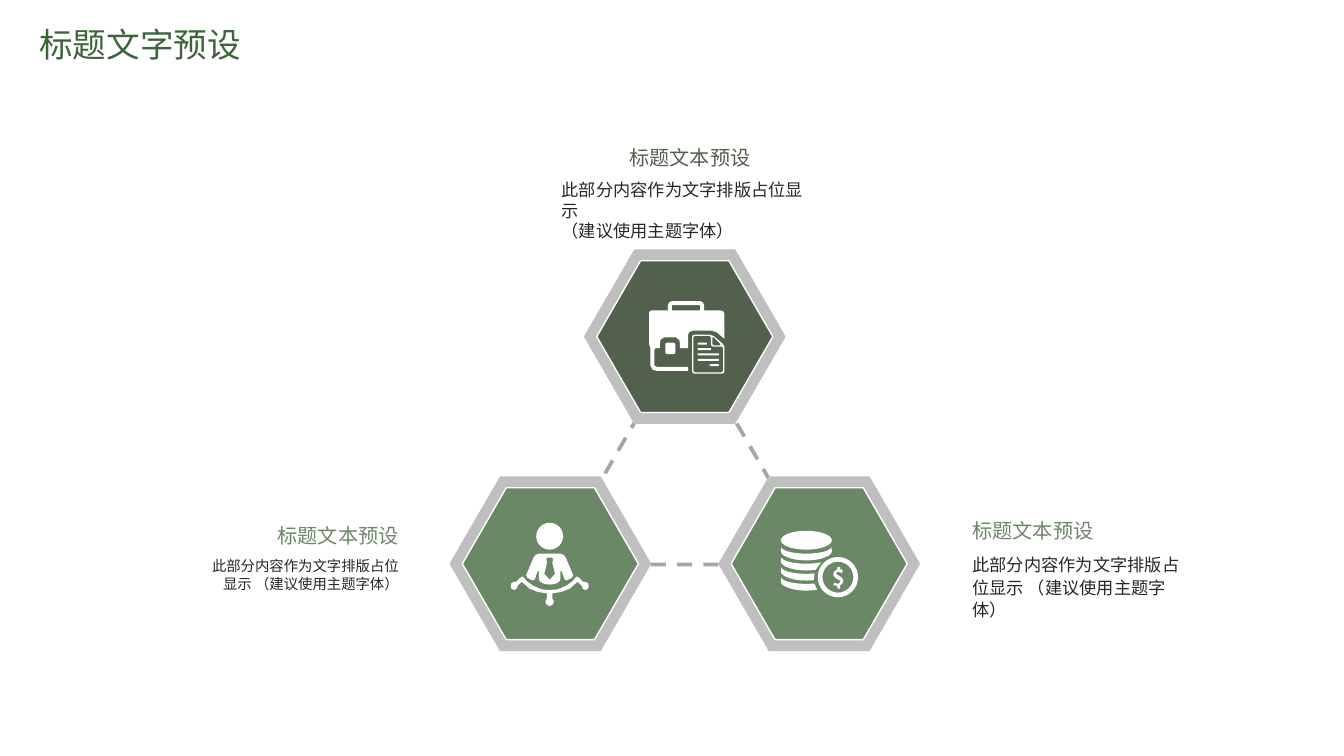
import math

import pptx
import pptx.dml.color
import pptx.enum.dml
import pptx.enum.shapes
import pptx.enum.text
import pptx.util

PX = 4572
COLOURS = {
    "title": "3D6539", "dark": "51614B", "light": "6B8866", "body": "262626",
    "rim": "BFBFBF", "rim_line": "C0C0C0", "link": "A6A6A6", "white": "FFFFFF",
}
PRESETS = pptx.enum.shapes.MSO_SHAPE
ALIGN = pptx.enum.text.PP_ALIGN
PLACEHOLDER = "此部分内容作为文字排版占位显示"
HINT = "（建议使用主题字体）"


def px(length):
    """Turn px into EMU."""
    return pptx.util.Emu(round(length * PX))


def rgb(name):
    """Look up a named colour."""
    return pptx.dml.color.RGBColor.from_string(COLOURS[name])


def paint(shape, fill=None, line=None, width=0.75):
    """Give a shape its fill and line, without a shadow."""
    shape.shadow.inherit = False
    for part, colour in ((shape.fill, fill), (shape.line.fill, line)):
        if colour:
            part.solid()
            part.fore_color.rgb = rgb(colour)
        else:
            part.background()
    if line:
        shape.line.width = pptx.util.Pt(width)


def preset(slide, kind, box, **look):
    """Add a painted preset shape."""
    shape = slide.shapes.add_shape(kind, *map(px, box))
    paint(shape, **look)
    return shape


def outline(slide, box, *contours):
    """Add a white outline whose later contours are cut out."""
    points = [[(px(box[0] + x), px(box[1] + y)) for x, y in contour] for contour in contours]
    builder = slide.shapes.build_freeform(*points[0][0], scale=1.0)
    builder.add_line_segments(points[0][1:], close=True)
    for hole in points[1:]:
        builder.move_to(*hole[0])
        builder.add_line_segments(hole[1:], close=True)
    paint(builder.convert_to_shape(), fill="white")


def arc(cx, cy, rx, ry, start=0, end=360, steps=32):
    """List points along an elliptical arc, in degrees."""
    angles = [math.radians(start + (end - start) * i / steps) for i in range(steps + 1)]
    return [(cx + rx * math.cos(a), cy + ry * math.sin(a)) for a in angles]


def rounded(x, y, w, h, r):
    """List points around a rectangle with round corners."""
    corners = ((x + w - r, y + h - r), (x + r, y + h - r), (x + r, y + r), (x + w - r, y + r))
    return [p for i, (cx, cy) in enumerate(corners)
            for p in arc(cx, cy, r, r, 90 * i, 90 * i + 90, 4)]


def mirrored(half, centre):
    """Complete a right half with its reflection."""
    return half + [(2 * centre - x, y) for x, y in reversed(half)]


def briefcase(slide, box):
    """Draw a briefcase with a document inside the hexagon box."""
    outline(slide, box, rounded(120, 138, 15, 17, 3))
    for row, (x, width) in enumerate(((168, 14), (168, 20), (168, 32), (168, 32), (186, 14))):
        outline(slide, box, rounded(x, 138 + 8 * row, width, 3, 1))
    page = [(206, 140), (192, 128), (186, 126), (164, 126), (161, 127), (160, 130),
            (160, 180), (161, 183), (164, 184), (204, 184), (207, 183), (208, 180), (208, 144)]
    margin = [(204, 182), (164, 182), (162, 180), (162, 130), (164, 128), (186, 128),
              (188, 130), (188, 140), (189, 143), (192, 144), (205, 144), (206, 146), (206, 180)]
    fold = [(190, 130), (192, 130), (202, 140), (202, 142), (192, 142), (190, 140)]
    outline(slide, box, page, margin, fold)
    case = [(154, 174), (108, 174), (104, 172), (104, 148), (106, 146), (112, 146),
            (112, 140), (113, 134), (118, 130), (136, 130), (141, 134), (142, 140),
            (142, 146), (154, 146), (154, 126), (156, 122), (162, 120), (188, 120),
            (196, 122), (208, 132), (208, 94), (206, 91), (202, 90), (178, 90),
            (178, 82), (176, 78), (172, 76), (130, 76), (126, 78), (124, 82), (124, 90),
            (100, 90), (97, 91), (96, 94), (96, 140), (98, 146), (98, 172), (101, 178),
            (108, 180), (154, 180)]
    outline(slide, box, case, rounded(130, 82, 42, 8, 1))


def coins(slide, box):
    """Draw a stack of coins with a dollar badge inside the hexagon box."""
    preset(slide, PRESETS.OVAL, (box[0] + 92, box[1] + 80, 76, 28), fill="white")
    for row, (upper, lower) in enumerate(((167, 168), (152, 144), (142, 141), (142, 146))):
        top = 104 + 15 * row
        turn = [math.degrees(math.acos((cut - 130) / rx)) for cut, rx in ((upper, 37), (lower, 38))]
        outline(slide, box, arc(130, top, 37, 10, 180, turn[0])
                + arc(130, top + 6, 38, 14, turn[1], 180))
    outline(slide, box, [
        (180, 148), (174, 144), (175, 142), (178, 141), (182, 143), (184, 140), (184, 138),
        (180, 137), (180, 134), (176, 134), (176, 137), (172, 140), (170, 144), (171, 148),
        (176, 152), (180, 154), (180, 156), (179, 158), (176, 159), (172, 157), (170, 160),
        (171, 161), (176, 162), (176, 166), (180, 166), (180, 161), (184, 158), (185, 154),
        (183, 150)])
    outline(slide, box, arc(177, 149, 30, 30), arc(177, 149, 23, 23))


def manager(slide, box):
    """Draw a person above a network inside the hexagon box."""
    preset(slide, PRESETS.OVAL, (box[0] + 128, box[1] + 68, 40, 40), fill="white")
    torso = [(148, 114), (164, 114), (169, 116), (172, 120), (183, 146), (181, 150),
             (173, 154), (170, 152), (166, 140), (164, 140), (164, 152), (162, 156),
             (156, 159), (148, 160)]
    tie = [(148, 120), (152, 120), (153, 122), (152, 128), (156, 144), (154, 146), (149, 152)]
    network = [(148, 168), (160, 167), (172, 162), (182, 155), (186, 150), (188, 148),
               (192, 150), (198, 156), (202, 156), (205, 158), (206, 162), (205, 166),
               (201, 168), (197, 166), (196, 162), (190, 156), (188, 157), (178, 166),
               (165, 171), (152, 173), (152, 181), (154, 184), (154, 187), (152, 190), (148, 192)]
    outline(slide, box, mirrored(torso, 148), mirrored(tie, 148))
    outline(slide, box, mirrored(network, 148))


def badge(slide, box, colour, icon):
    """Place a rimmed hexagon and its icon in the box."""
    left, top, width, height = box
    core = (left + 18, top + 16, width - 36, height - 32)
    for place, look in ((box, {"fill": "rim", "line": "rim_line"}),
                        (core, {"fill": colour, "line": "white"})):
        preset(slide, PRESETS.HEXAGON, place, **look).adjustments[0] = 0.289
    icon(slide, box)


def words(slide, box, text, colour, size, font="Calibri", wrap=True,
          align=ALIGN.LEFT, spacing=None, insets=(20, 20)):
    """Place one formatted paragraph in the box."""
    frame = slide.shapes.add_textbox(*map(px, box)).text_frame
    frame.text = text
    paragraph = frame.paragraphs[0]
    formats = [
        (frame, {"word_wrap": wrap, "margin_left": px(insets[0]), "margin_right": px(insets[1]),
                 "margin_top": px(10), "margin_bottom": px(10)}),
        (paragraph, {"alignment": align, "line_spacing": spacing}),
    ]
    for run in paragraph.runs:
        formats.append((run.font, {"name": font, "size": pptx.util.Pt(size)}))
        formats.append((run.font.color, {"rgb": rgb(colour)}))
    for target, values in formats:
        for key, value in values.items():
            setattr(target, key, value)


def caption(slide, box, heading, colour, text, size, **body):
    """Place a heading above its text, offset as given inside the box."""
    left, top, width, height = box
    shared = {key: body[key] for key in ("align", "insets") if key in body}
    words(slide, (left + heading[0], top, heading[1], 50), "标题文本预设", colour, 10.8,
          wrap=False, **shared)
    words(slide, (left, top + 51, width, height - 51), text, "body", size, **body)


def triad(slide, box):
    """Place the dashed triangle and the three hexagons in the box."""
    left, top = box[:2]
    link = preset(slide, PRESETS.ISOSCELES_TRIANGLE, (left + 152, top + 126, 396, 342),
                  line="link", width=2)
    link.line.dash_style = pptx.enum.dml.MSO_LINE.DASH
    for x, y, colour, icon in ((200, 0, "dark", briefcase), (400, 338, "light", coins),
                               (0, 338, "light", manager)):
        badge(slide, (left + x, top + y, 298, 258), colour, icon)


def main():
    """Build the slide and save it."""
    deck = pptx.Presentation()
    deck.slide_width, deck.slide_height = px(2000), px(1125)
    slide = deck.slides.add_slide(deck.slide_layouts[6])
    triad(slide, (670, 372, 698, 596))
    caption(slide, (816, 206, 410, 167), (101, 228), "dark", f"{PLACEHOLDER}\v{HINT}", 9.2)
    caption(slide, (1369, 761, 410, 143), (0, 290), "light", f"{PLACEHOLDER} {HINT}", 9.2,
            spacing=1.1, insets=(78, 20))
    caption(slide, (279, 769, 392, 143), (102, 290), "light", f"{PLACEHOLDER} {HINT}", 7.7,
            align=ALIGN.RIGHT, insets=(20, 78))
    words(slide, (39, 26, 468, 80), "标题文字预设", "title", 18, font="Noto Sans CJK SC")
    deck.save("out.pptx")


if __name__ == "__main__":
    main()
